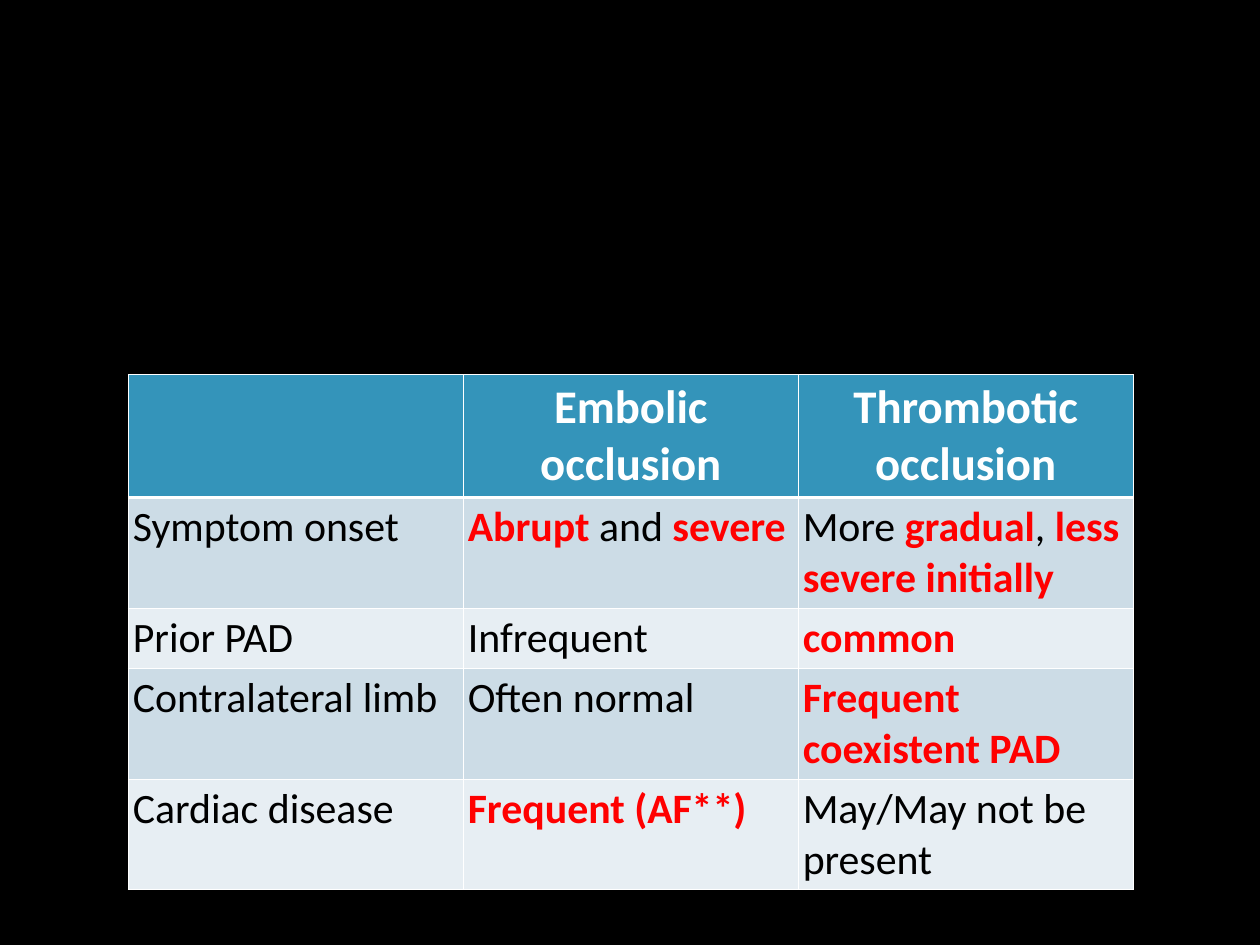
from lxml import etree
from pptx import Presentation
from pptx.dml.color import RGBColor
from pptx.enum.text import PP_ALIGN
from pptx.oxml.ns import qn
from pptx.util import Inches, Pt

CENTER = PP_ALIGN.CENTER
BLACK = RGBColor(0x00, 0x00, 0x00)
WHITE = RGBColor(0xFF, 0xFF, 0xFF)
RED = RGBColor(0xFF, 0x00, 0x00)
TEAL = RGBColor(0x34, 0x94, 0xBA)
BANDS = (RGBColor(0xCC, 0xDC, 0xE6), RGBColor(0xE7, 0xEE, 0xF3))

# Text between bars is stressed in bold red
HEADS = ("", "Embolic occlusion", "Thrombotic occlusion")
ROWS = (
    ("Symptom onset", "|Abrupt| and |severe|",
     "More |gradual|, |less severe initially|"),
    ("Prior PAD", "Infrequent", "|common|"),
    ("Contralateral limb", "Often normal", "|Frequent coexistent PAD|"),
    ("Cardiac disease", "|Frequent (AF**)|", "May/May not be present"),
)
HEIGHTS = (1.39, 1.25, 0.67, 1.25, 1.25)
WIDTH = 3.78


def set_border(cell, side, width):
    props = cell._tc.get_or_add_tcPr()
    line = etree.SubElement(props, qn("a:ln" + side), w=str(Pt(width)))
    fill = etree.SubElement(line, qn("a:solidFill"))
    etree.SubElement(fill, qn("a:srgbClr"), val=str(WHITE))


def style_cell(cell, color, top, bottom):
    cell.margin_left = cell.margin_right = Inches(0.05)
    cell.margin_top = cell.margin_bottom = Inches(0.05)
    for side, width in (("L", 1), ("R", 1), ("T", top), ("B", bottom)):
        set_border(cell, side, width)
    cell.fill.solid()
    cell.fill.fore_color.rgb = color


def write_head(cell, text):
    para = cell.text_frame.paragraphs[0]
    para.text = text
    para.alignment = CENTER
    font = para.font
    font.name, font.size, font.bold = "Calibri", Pt(38), True
    font.color.rgb = WHITE


def write_body(cell, text):
    para = cell.text_frame.paragraphs[0]
    para.font.name, para.font.size = "Calibri", Pt(34)
    for i, part in enumerate(text.split("|")):
        if part:
            run = para.add_run()
            run.text = part
            stress = i % 2 == 1
            run.font.bold = stress
            run.font.color.rgb = RED if stress else BLACK


def add_grid(slide):
    count = len(HEADS)
    frame = slide.shapes.add_table(
        len(HEIGHTS), count, Inches(1.45), Inches(4.23),
        Inches(WIDTH * count), Inches(sum(HEIGHTS)))
    table = frame.table
    for col in table.columns:
        col.width = Inches(WIDTH)
    for row, height in zip(table.rows, HEIGHTS):
        row.height = Inches(height)

    # Header row
    for c, text in enumerate(HEADS):
        cell = table.cell(0, c)
        style_cell(cell, TEAL, 1, 3)
        if text:
            write_head(cell, text)

    # Banded body rows
    for r, texts in enumerate(ROWS, 1):
        for c, text in enumerate(texts):
            cell = table.cell(r, c)
            style_cell(cell, BANDS[(r - 1) % 2], 3 if r == 1 else 1, 1)
            write_body(cell, text)


def main():
    deck = Presentation()
    deck.slide_width, deck.slide_height = Inches(14.22), Inches(10.67)
    slide = deck.slides.add_slide(deck.slide_layouts[6])
    back = slide.background.fill
    back.solid()
    back.fore_color.rgb = BLACK
    add_grid(slide)
    deck.save("out.pptx")


if __name__ == "__main__":
    main()
